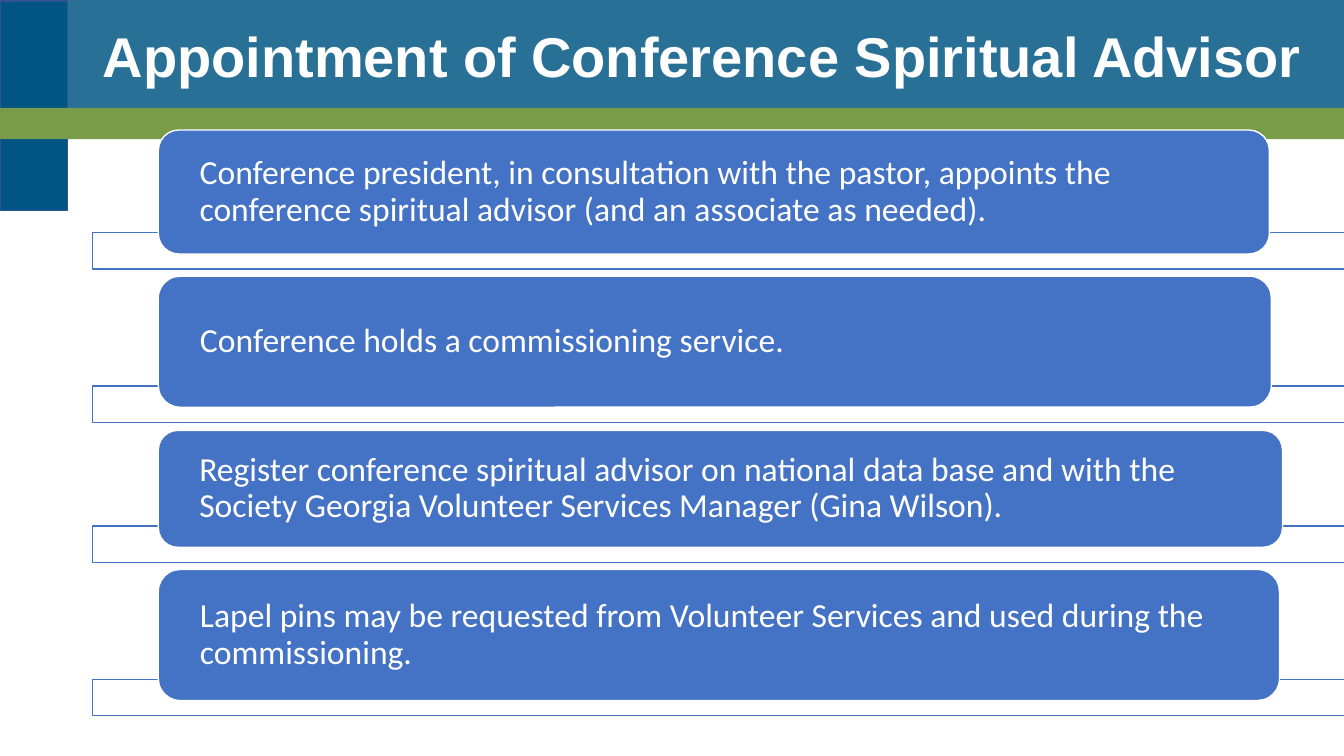
from lxml.etree import SubElement
from pptx import Presentation
from pptx.dml.color import RGBColor
from pptx.enum.shapes import MSO_SHAPE
from pptx.enum.text import MSO_ANCHOR, MSO_AUTO_SIZE, PP_ALIGN
from pptx.oxml.ns import qn
from pptx.util import Pt

TITLE = "Appointment of Conference Spiritual Advisor"
STEPS = [
    ("Conference president, in consultation with the pastor, appoints the "
     "conference spiritual advisor (and an associate as needed).", 129, 1102, 123),
    ("Conference holds a commissioning service.", 274, 1104, 130),
    ("Register conference spiritual advisor on national data base and with the "
     "Society Georgia Volunteer Services Manager (Gina Wilson).", 427, 1115, 116),
    ("Lapel pins may be requested from Volunteer Services and used during the "
     "commissioning.", 565, 1112, 130),
]
COLORS = {"navy": "005584", "edge": "325491", "green": "789C4A",
          "blue": "4472C4", "white": "FFFFFF"}
PX = 9144
WIDE, HIGH = 1333, 750
BAR_LEFT, BAR_WIDE, BAR_HIGH = 92, 1317, 36
STEP_LEFT, OVERLAP, INSET = 157, 21, 35


def color(name):
    return RGBColor.from_string(COLORS[name])


def place(shape, left, top, width, height):
    shape.left, shape.top = left * PX, top * PX
    shape.width, shape.height = width * PX, height * PX


def add_box(slide, kind, area, fill, line=None, alpha=100):
    box = slide.shapes.add_shape(kind, *(n * PX for n in area))
    box.shadow.inherit = False
    box.fill.solid()
    box.fill.fore_color.rgb = color(fill)
    if alpha < 100:
        tint = box.element.spPr.find(qn("a:solidFill"))[0]
        SubElement(tint, qn("a:alpha"), val=str(alpha * 1000))
    if line:
        box.line.color.rgb = color(line)
        box.line.width = Pt(1)
    else:
        box.line.fill.background()
    return box


def set_text(shape, text, font, size, bold, anchor):
    frame = shape.text_frame
    frame.text = text
    frame.word_wrap = True
    frame.auto_size = MSO_AUTO_SIZE.NONE
    frame.vertical_anchor = anchor
    para = frame.paragraphs[0]
    para.alignment = PP_ALIGN.LEFT
    para.line_spacing = 0.9
    para.font.name = font
    para.font.size = Pt(size)
    para.font.bold = bold
    para.font.color.rgb = color("white")
    return frame


def add_step(slide, text, top, width, height):
    bar_top = top + height - OVERLAP
    add_box(slide, MSO_SHAPE.RECTANGLE, (BAR_LEFT, bar_top, BAR_WIDE, BAR_HIGH),
            "white", "blue", 90)
    step = add_box(slide, MSO_SHAPE.ROUNDED_RECTANGLE,
                   (STEP_LEFT, top, width, height), "blue", "white")
    frame = set_text(step, text, "Calibri", 24, False, MSO_ANCHOR.MIDDLE)
    frame.margin_left = frame.margin_right = INSET * PX
    frame.margin_top = frame.margin_bottom = 0


def main():
    deck = Presentation()
    deck.slide_width, deck.slide_height = WIDE * PX, HIGH * PX
    slide = deck.slides.add_slide(deck.slide_layouts[5])
    add_box(slide, MSO_SHAPE.RECTANGLE, (0, 0, WIDE, 113), "navy", alpha=84)
    add_box(slide, MSO_SHAPE.RECTANGLE, (0, 1, 67, 208), "navy", "edge")
    add_box(slide, MSO_SHAPE.RECTANGLE, (0, 107, WIDE, 31), "green")
    for step in STEPS:
        add_step(slide, *step)
    title = slide.shapes.title
    place(title, 92, 24, 1220, 89)
    set_text(title, TITLE, "Arial", 40, True, MSO_ANCHOR.TOP)
    title.element.getparent().append(title.element)
    deck.save("out.pptx")


if __name__ == "__main__":
    main()
